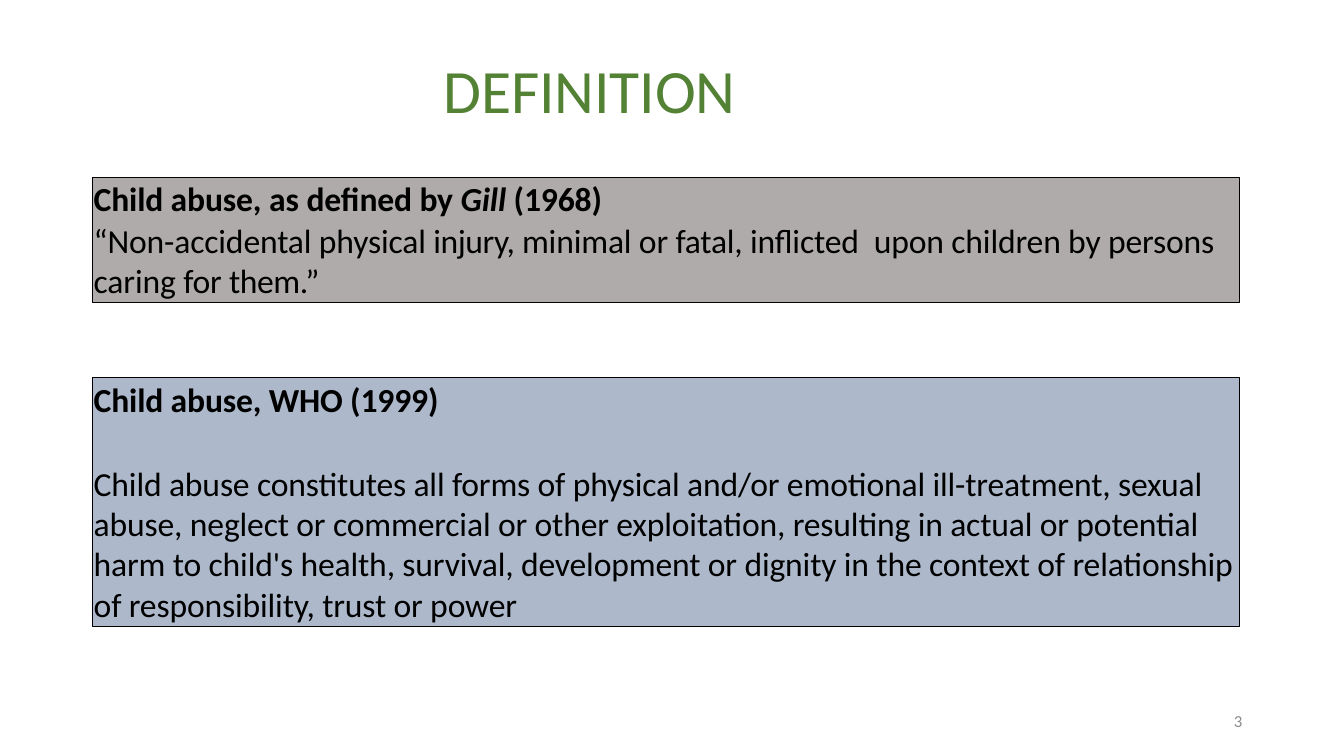
"""Builds the slide that defines child abuse."""
from pptx import Presentation
from pptx import util as u
from pptx.dml.color import RGBColor
from pptx.enum import shapes, text

WIDTH, HEIGHT = 13.33, 7.5
MARGIN, PANEL_WIDTH = 0.92, 11.37
GREEN = RGBColor(0x54, 0x82, 0x35)
GREY = RGBColor(0x8C, 0x8C, 0x8C)
BLACK = RGBColor(0, 0, 0)
WARM_GREY = RGBColor(0xAF, 0xAB, 0xAB)
PALE_BLUE = RGBColor(0xAD, 0xB9, 0xCA)

GILL_HEADING = [
    ("Child abuse, ", -0.1), ("as ", 0), ("defined by ", -0.1),
    ("Gill ", -0.1, True), ("(1968)", -0.1),
]
GILL_QUOTE = [
    ("“Non-accidental physical ", -0.1), ("injury, ", -0.3),
    ("minimal or ", -0.1), ("fatal, ", -0.2),
    ("inflicted  upon children by persons caring ", -0.1),
    ("for ", -0.2), ("them.”", -0.3),
]
WHO_HEADING = [("Child abuse, WHO (1999)", -0.1)]
WHO_TEXT = [(
    "Child abuse constitutes all forms of physical and/or emotional "
    "ill-treatment, sexual abuse, neglect or commercial or other exploitation, "
    "resulting in actual or potential harm to child's health, survival, "
    "development or dignity in the context of relationship of responsibility, "
    "trust or power", -0.1)]


def place(shape, left, top, width, height):
    """Set the position and size of a shape in inches."""
    shape.left, shape.top = u.Inches(left), u.Inches(top)
    shape.width, shape.height = u.Inches(width), u.Inches(height)


def prepare_frame(shape, anchor):
    """Give a shape's text frame tight insets and wrapping, and return it."""
    frame = shape.text_frame
    frame.word_wrap = True
    frame.auto_size = text.MSO_AUTO_SIZE.NONE
    frame.vertical_anchor = anchor
    frame.margin_left = frame.margin_right = frame.margin_bottom = 0
    frame.margin_top = u.Inches(0.01)
    return frame


def write(para, spans, size=24, color=BLACK, bold=False, before=1,
          align=text.PP_ALIGN.LEFT):
    """Fill a paragraph with spans of text, letter spacing and optional italic."""
    para.alignment = align
    para.space_before = u.Pt(before)
    para._p.get_or_add_pPr().set("marL", str(u.Inches(0.01)))
    for words, spacing, *italic in spans:
        span = para.add_run()
        span.text = words
        font = span.font
        font.name, font.size, font.bold = "Calibri", u.Pt(size), bold
        font.italic = bool(italic)
        font.color.rgb = color
        span._r.get_or_add_rPr().set("spc", str(round(spacing * 100)))


def add_title(page, words):
    """Place and format the title placeholder."""
    title = page.shapes.title
    place(title, 4.39, HEIGHT / 15, 4, HEIGHT / 10)
    frame = prepare_frame(title, text.MSO_ANCHOR.MIDDLE)
    write(frame.paragraphs[0], [(words, -0.1)], size=44, color=GREEN)


def add_panel(page, top, height, fill, heading, body, gap=1):
    """Add a bordered panel with a bold heading above its definition."""
    panel = page.shapes.add_shape(shapes.MSO_SHAPE.RECTANGLE, 0, 0, 0, 0)
    place(panel, MARGIN, top, PANEL_WIDTH, height)
    panel.shadow.inherit = False
    panel.fill.solid()
    panel.fill.fore_color.rgb = fill
    panel.line.color.rgb = BLACK
    panel.line.width = u.Pt(0.75)
    frame = prepare_frame(panel, text.MSO_ANCHOR.TOP)
    write(frame.paragraphs[0], heading, bold=True)
    write(frame.add_paragraph(), body, before=gap)


def add_page_number(page, number):
    """Add the page number at the lower right."""
    box = page.shapes.add_textbox(0, 0, 0, 0)
    place(box, 9.42, 6.95, 3, 0.4)
    frame = prepare_frame(box, text.MSO_ANCHOR.MIDDLE)
    frame.margin_right = u.Inches(0.1)
    frame.margin_top = 0
    write(frame.paragraphs[0], [(number, 0)], size=12, color=GREY, before=0,
          align=text.PP_ALIGN.RIGHT)


def main():
    """Build and save the deck."""
    deck = Presentation()
    deck.slide_width, deck.slide_height = u.Inches(WIDTH), u.Inches(HEIGHT)
    page = deck.slides.add_slide(deck.slide_layouts.get_by_name("Title Only"))
    add_title(page, "DEFINITION")
    add_panel(page, 1.76, 1.24, WARM_GREY, GILL_HEADING, GILL_QUOTE)
    add_panel(page, HEIGHT / 2, 2.47, PALE_BLUE, WHO_HEADING, WHO_TEXT, gap=31)
    add_page_number(page, "3")
    deck.save("out.pptx")


if __name__ == "__main__":
    main()
